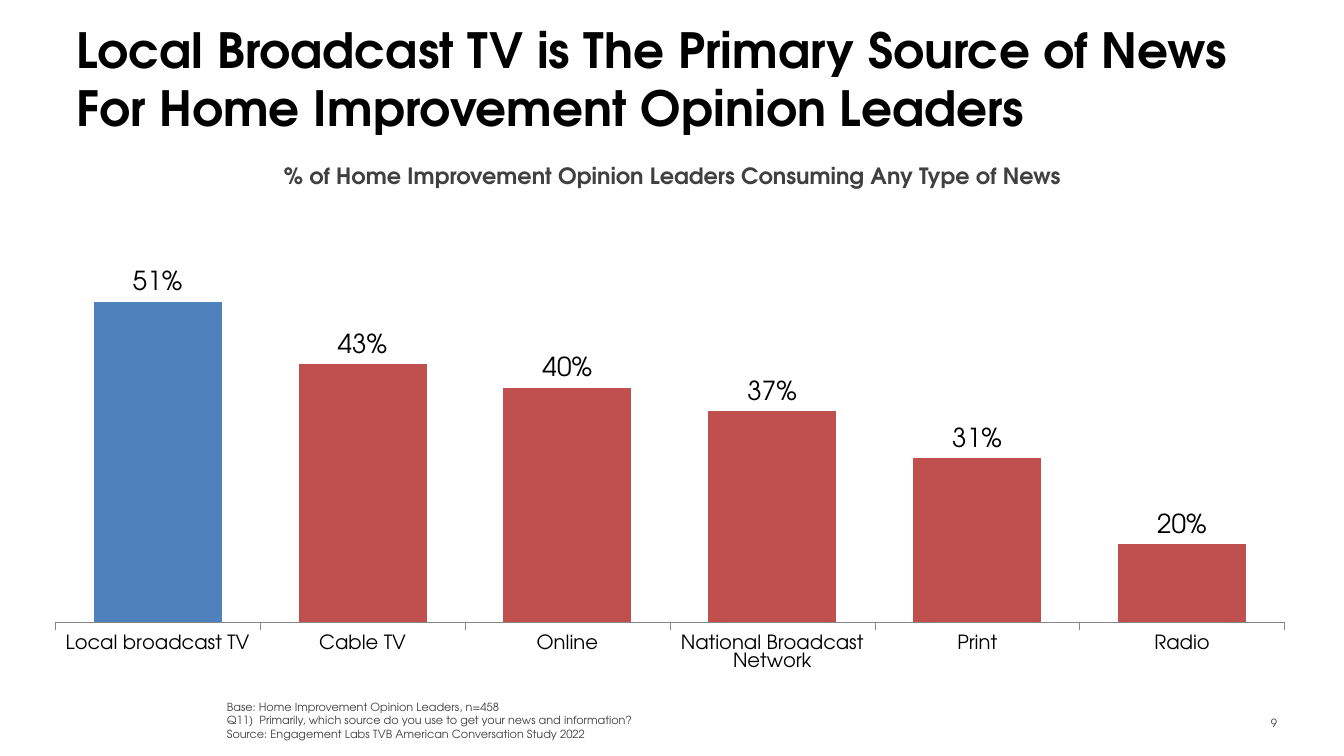
from pptx import Presentation
from pptx import util as u
from pptx.chart.data import CategoryChartData
from pptx.dml.color import RGBColor
from pptx.enum import chart as ch, text
from pptx.oxml import parse_xml
from pptx.oxml.ns import nsdecls

FONT = "TeX Gyre Adventor"
COLORS = {"black": "000000", "grey": "404040", "number": "3C3C3A",
          "axis": "868686", "local": "4F81BD", "other": "C0504D"}
NEWS_SOURCES = {"Local broadcast TV": 0.51, "Cable TV": 0.43, "Online": 0.40,
                "National Broadcast\nNetwork": 0.37, "Print": 0.31, "Radio": 0.20}
FOOTNOTES = ["Base: Home Improvement Opinion Leaders, n=458",
             "Q11)  Primarily, which source do you use to get your news and information?",
             "Source: Engagement Labs TVB American Conversation Study 2022"]


class Deck:
    """Holds the shared style and the current slide."""

    def __init__(self, width, aspect):
        self.prs = Presentation()
        self.prs.slide_width = u.Inches(width)
        self.prs.slide_height = u.Inches(width / aspect)
        self.slide = self.prs.slides.add_slide(self.prs.slide_layouts[6])

    def color(self, name):
        return RGBColor.from_string(COLORS[name])

    def style(self, font, size, color, bold=False):
        font.name, font.size, font.bold = FONT, u.Pt(size), bold
        font.color.rgb = self.color(color)

    def run(self, paragraph, words, size, color, bold=False):
        run = paragraph.add_run()
        run.text = words
        self.style(run.font, size, color, bold)

    def text(self, box, lines, size, color, bold=False, align=text.PP_ALIGN.LEFT,
             anchor=text.MSO_ANCHOR.TOP, top_inset=0.05, wrap=True, grow=False):
        frame = self.slide.shapes.add_textbox(*map(u.Inches, box)).text_frame
        frame.word_wrap = wrap
        frame.vertical_anchor = anchor
        frame.margin_top = u.Inches(top_inset)
        if grow:
            frame.auto_size = text.MSO_AUTO_SIZE.SHAPE_TO_FIT_TEXT
        for i, line in enumerate(lines):
            paragraph = frame.add_paragraph() if i else frame.paragraphs[0]
            paragraph.alignment = align
            self.run(paragraph, line, size, color, bold)
        return frame

    def columns(self, box, values, plot_top, plot_height):
        data = CategoryChartData(number_format="0%")
        data.categories = list(values)
        data.add_series("Series 1", list(values.values()))
        chart = self.slide.shapes.add_chart(
            ch.XL_CHART_TYPE.COLUMN_CLUSTERED, *map(u.Inches, box), data).chart
        chart.has_legend = chart.has_title = False
        self.style(chart.font, 18, "black")

        scale = chart.value_axis
        scale.minimum_scale, scale.maximum_scale = 0.1, 0.6
        scale.has_major_gridlines = scale.visible = False
        names = chart.category_axis
        names.major_tick_mark = ch.XL_TICK_MARK.OUTSIDE
        names.format.line.color.rgb = self.color("axis")
        names.format.line.width = u.Pt(0.25)
        self.style(names.tick_labels.font, 10.5, "black")

        plot = chart.plots[0]
        plot.gap_width, plot.vary_by_categories = 60, False
        series = plot.series[0]
        series.format.fill.solid()
        series.format.fill.fore_color.rgb = self.color("other")
        highlight = series.points[0].format.fill
        highlight.solid()
        highlight.fore_color.rgb = self.color("local")
        labels = series.data_labels
        labels.show_value = True
        labels.number_format, labels.number_format_is_linked = "0%", False
        labels.position = ch.XL_LABEL_POSITION.OUTSIDE_END
        self.style(labels.font, 14, "black")
        self.place_plot(chart, plot_top, plot_height)

    def place_plot(self, chart, top, height):
        area = chart.element.chart.plotArea
        for layout in area.xpath("c:layout"):
            area.remove(layout)
        sizes = {"x": 0, "y": top, "w": 1, "h": height}
        modes = "".join(f'<c:{key}Mode val="edge"/>' for key in "xy")
        extents = "".join(f'<c:{key} val="{value}"/>' for key, value in sizes.items())
        area.insert(0, parse_xml(
            f'<c:layout {nsdecls("c")}><c:manualLayout><c:layoutTarget val="inner"/>'
            f"{modes}{extents}</c:manualLayout></c:layout>"))


def main():
    deck = Deck(10, 16 / 9)
    page = deck.text((9.04, 5.22, 0.59, 0.3), ["9"], 6, "number",
                     align=text.PP_ALIGN.RIGHT, anchor=text.MSO_ANCHOR.MIDDLE)
    deck.run(page.paragraphs[0], " ", 8, "number")
    deck.text((0.47, 0.15, 9.26, 0.89),
              ["Local Broadcast TV is The Primary Source of News "
               "For Home Improvement Opinion Leaders"], 26, "black", bold=True, top_inset=0)
    deck.columns((0.41, 1.29, 9.15, 3.93), NEWS_SOURCES, 0.11, 0.74)
    deck.text((1.97, 1.16, 6.07, 0.3),
              ["% of Home Improvement Opinion Leaders Consuming Any Type of News"],
              12, "grey", bold=True, align=text.PP_ALIGN.CENTER, wrap=False, grow=True)
    deck.text((1.59, 5.16, 8.15, 0.4), FOOTNOTES, 6, "grey",
              anchor=text.MSO_ANCHOR.BOTTOM, grow=True)
    deck.prs.save("out.pptx")


if __name__ == "__main__":
    main()
